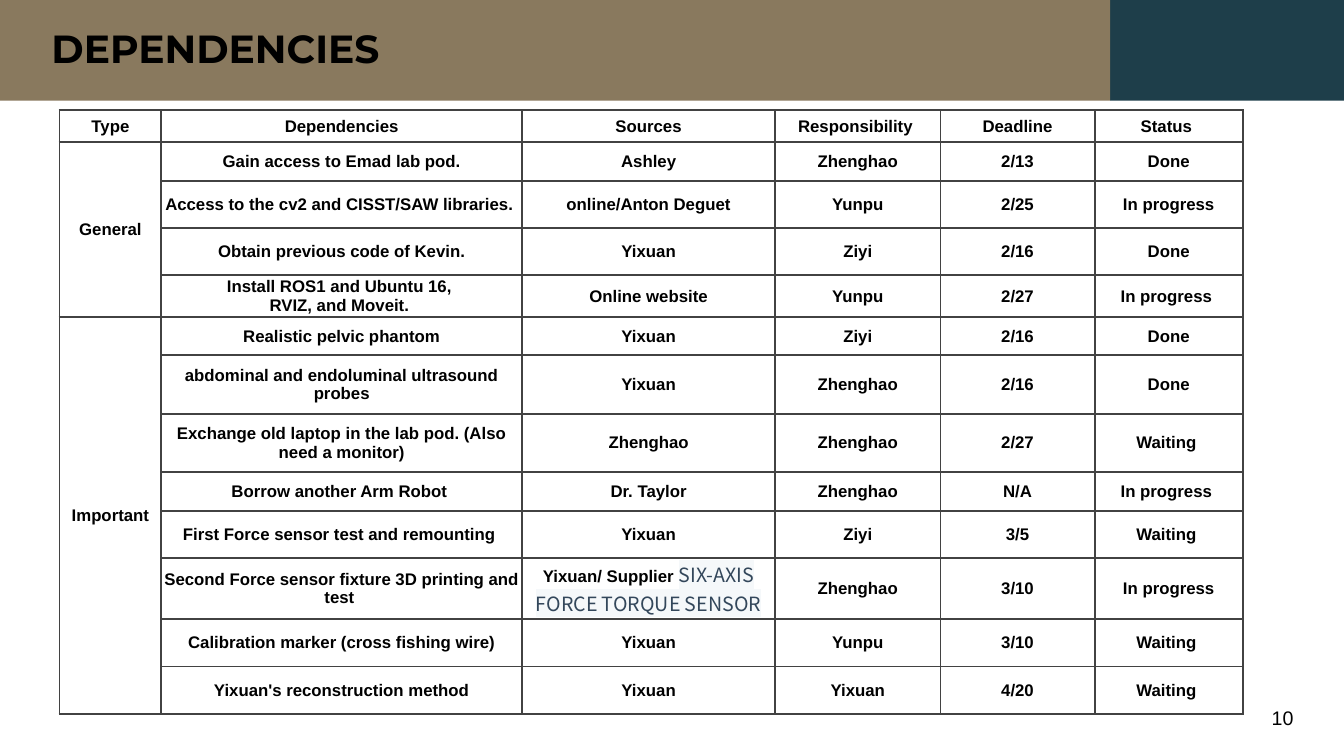
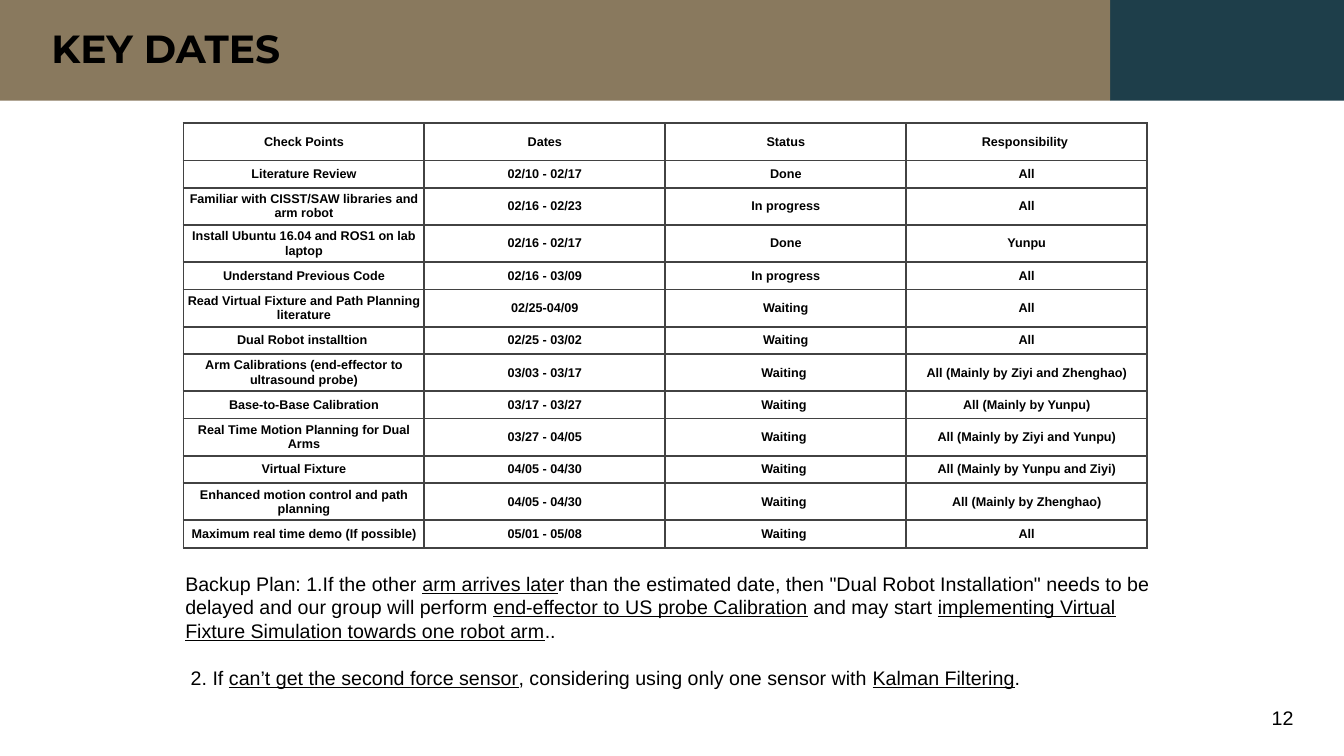
from dataclasses import dataclass
from typing import Any

from lxml.etree import SubElement as Sub
from pptx import Presentation
from pptx.dml.color import RGBColor as Rgb
from pptx.enum.shapes import MSO_SHAPE as Kind
from pptx.enum.text import MSO_ANCHOR as Anchor, PP_ALIGN as Align
from pptx.oxml.ns import qn
from pptx.util import Emu, Inches, Pt

WIDE, HIGH = Inches(13.33), Inches(7.5)
TEAL, TAN, INK, RULE, PAPER = "1E3E4A", "89795E", "000000", "424242", "FFFFFF"
SLATE, MIST = "33475B", "F5F8FA"

HEAD = {"name": "Montserrat", "size": Pt(28), "bold": True}
TEXT = {"name": "Arial", "size": Pt(14), "bold": False}
LARGE = {"name": "Arial", "size": Pt(12), "bold": True}
SMALL = {"name": "Arial", "size": Pt(9), "bold": True}
MARK = {"name": "Noto Sans CJK SC", "size": Pt(14), "bold": False}
PAD = {f"margin_{side}": Inches(0.02) for side in ("left", "right", "top", "bottom")}


@dataclass
class Box:
    """Place and size in percent of the slide."""
    x: float
    y: float
    w: float
    h: float

    def fit(self) -> dict[str, Emu]:
        return {
            "left": Emu(int(WIDE * self.x / 100)),
            "top": Emu(int(HIGH * self.y / 100)),
            "width": Emu(int(WIDE * self.w / 100)),
            "height": Emu(int(HIGH * self.h / 100)),
        }


@dataclass
class Band:
    box: Box
    fill: str


@dataclass
class Grid:
    box: Box
    cols: list[int]
    rows: list[int]
    font: dict[str, Any]
    cells: list[tuple[str, ...]]
    spans: tuple[tuple[int, int], ...] = ()


@dataclass
class Page:
    title: str
    number: int
    grid: Grid
    notes: tuple[str, ...] = ()


BANDS = [Band(Box(82.6, 0, 17.4, 13.33), TEAL), Band(Box(0, 0, 82.6, 13.33), TAN)]
TITLE = Box(3.08, 0, 76.6, 13.33)
NUMBER = Box(74.48, 92.67, 22.5, 5.33)
NOTES = Box(13.05, 74.27, 75.23, 24.67)

NEEDS = Grid(
    Box(4.43, 14.55, 88.05, 79.8),
    [101, 358, 251, 164, 153, 147],
    [32, 38, 47, 47, 41, 38, 58, 58, 38, 47, 60, 47, 47],
    LARGE,
    [
        ("Type", "Dependencies", "Sources", "Responsibility ", "Deadline", "Status "),
        ("General", "Gain access to Emad lab pod.", "Ashley", "Zhenghao", "2/13", "Done"),
        ("", "Access to the cv2 and CISST/SAW libraries. ", "online/Anton Deguet",
         "Yunpu", "2/25", "In progress"),
        ("", "Obtain previous code of Kevin.", "Yixuan", "Ziyi", "2/16", "Done"),
        ("", "Install ROS1 and Ubuntu 16, \nRVIZ, and Moveit. ", "Online website",
         "Yunpu", "2/27", "In progress "),
        ("Important", "Realistic pelvic phantom", "Yixuan", "Ziyi", "2/16", "Done"),
        ("", "abdominal and endoluminal ultrasound probes", "Yixuan",
         "Zhenghao", "2/16", "Done"),
        ("", "Exchange old laptop in the lab pod. (Also need a monitor)", "Zhenghao",
         "Zhenghao", "2/27", "Waiting "),
        ("", "Borrow another Arm Robot ", "Dr. Taylor", "Zhenghao", "N/A", "In progress "),
        ("", "First Force sensor test and remounting ", "Yixuan", "Ziyi", "3/5", "Waiting "),
        ("", "Second Force sensor fixture 3D printing and test ",
         "Yixuan/ Supplier |SIX-AXIS FORCE TORQUE SENSOR", "Zhenghao", "3/10", "In progress"),
        ("", "Calibration marker (cross fishing wire)", "Yixuan", "Yunpu", "3/10", "Waiting "),
        ("", "Yixuan's reconstruction method", "Yixuan", "Yixuan", "4/20", "Waiting "),
    ],
    ((1, 4), (5, 8)),
)

DATES = Grid(
    Box(13.65, 16.29, 71.7, 56.15),
    [1] * 4,
    [37, 27, 37] + [37, 27] * 5,
    SMALL,
    [
        ("Check Points", "Dates", "Status", "Responsibility "),
        ("Literature Review", "02/10 - 02/17", "Done", "All"),
        ("Familiar with CISST/SAW libraries and arm robot", "02/16 - 02/23", "In progress", "All"),
        ("Install Ubuntu 16.04 and ROS1 on lab laptop", "02/16 - 02/17", "Done", "Yunpu"),
        ("Understand Previous Code", "02/16 - 03/09", "In progress", "All"),
        ("Read Virtual Fixture and Path Planning literature", "02/25-04/09", "Waiting", "All"),
        ("Dual Robot installtion ", "02/25 - 03/02", "Waiting", "All"),
        ("Arm Calibrations (end-effector to ultrasound probe)", "03/03 - 03/17", "Waiting ",
         "All (Mainly by Ziyi and Zhenghao)"),
        ("Base-to-Base Calibration", "03/17 - 03/27", "Waiting ", "All (Mainly by Yunpu)"),
        ("Real Time Motion Planning for Dual Arms", "03/27 - 04/05", "Waiting ",
         "All (Mainly by Ziyi and Yunpu)"),
        ("Virtual Fixture", "04/05 - 04/30", "Waiting ", "All (Mainly by Yunpu and Ziyi)"),
        ("Enhanced motion control and path planning", "04/05 - 04/30", "Waiting ",
         "All (Mainly by Zhenghao)"),
        ("Maximum real time demo (If possible)", "05/01 - 05/08", "Waiting ", "All"),
    ],
)

PAGES = [
    Page("DEPENDENCIES", 10, NEEDS),
    Page("KEY DATES", 12, DATES, (
        "Backup Plan: 1.If the other _arm arrives late_r than the estimated date, then "
        "\"Dual Robot Installation\" needs to be delayed and our group will perform "
        "_end-effector to US probe Calibration_ and may start "
        "_implementing Virtual Fixture Simulation towards one robot arm_..",
        " 2. If _can’t get the second force sensor_, considering using only one sensor "
        "with _Kalman Filtering_.",
    )),
]


def hue(code: str) -> Rgb:
    return Rgb.from_string(code)


def put(item: Any, vals: dict[str, Any]) -> None:
    for key, val in vals.items():
        setattr(item, key, val)


def paint(item: Any, code: str) -> None:
    item.fill.solid()
    item.fill.fore_color.rgb = hue(code)


def write(para: Any, text: str, form: dict[str, Any], code: str = INK) -> Any:
    run = para.add_run()
    run.text = text
    run.font.color.rgb = hue(code)
    put(run.font, form)
    return run


def glow(run: Any, code: str) -> None:
    props = run.font._element
    tag = Sub(props, qn("a:highlight"))
    Sub(tag, qn("a:srgbClr"), val=code)
    props.find(qn("a:solidFill")).addnext(tag)


def edge(cell: Any) -> None:
    props = cell._tc.get_or_add_tcPr()
    for spot, side in enumerate("LRTB"):
        line = Sub(props, qn(f"a:ln{side}"), w=str(Pt(1.5)))
        Sub(Sub(line, qn("a:solidFill")), qn("a:srgbClr"), val=RULE)
        props.insert(spot, line)


def fill(cell: Any, text: str, form: dict[str, Any]) -> None:
    paint(cell, PAPER)
    edge(cell)
    put(cell, {**PAD, "vertical_anchor": Anchor.MIDDLE})
    frame = cell.text_frame
    for spot, line in enumerate(text.split("\n")):
        para = frame.add_paragraph() if spot else frame.paragraphs[0]
        para.alignment = Align.CENTER
        para.font.size = form["size"]
        main, _, extra = line.partition("|")
        if main:
            write(para, main, form)
        if extra:
            glow(write(para, extra, MARK, SLATE), MIST)


def share(lanes: Any, parts: list[int], name: str, total: int) -> None:
    for lane, part in zip(lanes, parts):
        setattr(lane, name, Emu(int(total * part / sum(parts))))


def chart(slide: Any, grid: Grid) -> None:
    place = grid.box.fit()
    table = slide.shapes.add_table(len(grid.rows), len(grid.cols), **place).table
    put(table, {"first_row": False, "horz_banding": False})
    share(table.columns, grid.cols, "width", place["width"])
    share(table.rows, grid.rows, "height", place["height"])
    for y, row in enumerate(grid.cells):
        for x, text in enumerate(row):
            fill(table.cell(y, x), text, grid.font)
    for top, count in grid.spans:
        table.cell(top, 0).merge(table.cell(top + count - 1, 0))


def label(slide: Any, box: Box) -> Any:
    frame = slide.shapes.add_textbox(**box.fit()).text_frame
    frame.word_wrap = True
    return frame


def remark(slide: Any, notes: tuple[str, ...]) -> None:
    frame = label(slide, NOTES)
    put(frame, {"margin_top": Inches(0.1), "margin_bottom": Inches(0.1)})
    for spot, note in enumerate(notes):
        para = frame.add_paragraph() if spot else frame.paragraphs[0]
        if spot:
            para.space_before = Pt(17)
        for turn, part in enumerate(note.split("_")):
            write(para, part, {**TEXT, "underline": turn % 2 == 1})


def dress(layout: Any, slide: Any) -> None:
    put(layout.placeholders[0], TITLE.fit())
    for spot, band in enumerate(BANDS):
        shape = slide.shapes.add_shape(Kind.RECTANGLE, **band.box.fit())
        shape.shadow.inherit = False
        paint(shape, band.fill)
        shape.line.fill.background()
        layout.shapes.element.insert(2 + spot, shape.element)


def build(slide: Any, page: Page) -> None:
    frame = slide.shapes.title.text_frame
    put(frame, {"vertical_anchor": Anchor.MIDDLE, "word_wrap": True})
    head = frame.paragraphs[0]
    put(head, {"alignment": Align.LEFT, "line_spacing": 0.9})
    write(head, page.title, HEAD)
    chart(slide, page.grid)
    if page.notes:
        remark(slide, page.notes)
    foot = label(slide, NUMBER).paragraphs[0]
    foot.alignment = Align.RIGHT
    write(foot, str(page.number), TEXT)


def main() -> None:
    deck = Presentation()
    put(deck, {"slide_width": WIDE, "slide_height": HIGH})
    layout = deck.slide_layouts[5]
    for spot, page in enumerate(PAGES):
        slide = deck.slides.add_slide(layout)
        if not spot:
            dress(layout, slide)
        build(slide, page)
    deck.save("out.pptx")


if __name__ == "__main__":
    main()
